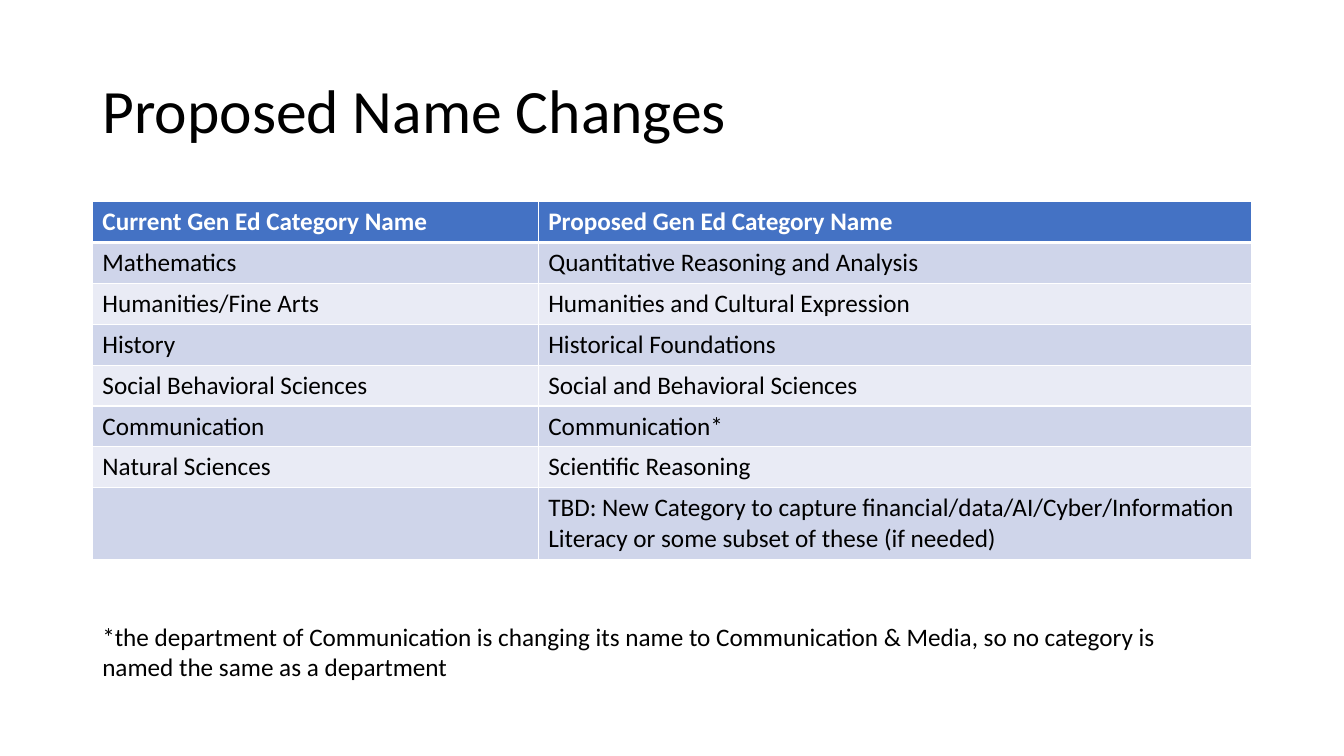
from lxml import etree
from pptx import Presentation
from pptx import util as u
from pptx.dml.color import RGBColor
from pptx.enum import text
from pptx.oxml import ns

BLACK = RGBColor(0x00, 0x00, 0x00)
WHITE = RGBColor(0xFF, 0xFF, 0xFF)
HEADER_BLUE = RGBColor(0x44, 0x72, 0xC4)
BAND_DARK = RGBColor(0xCF, 0xD5, 0xEA)
BAND_LIGHT = RGBColor(0xE9, 0xEB, 0xF5)

LEFT = 66
CONTENT_WIDTH = 828
COLUMN_WIDTHS = (318.5, 509.5)
ROW_HEIGHT = 29.2
LAST_ROW_HEIGHT = 50.4

CATEGORY_NAMES = [
    ("Current Gen Ed Category Name", "Proposed Gen Ed Category Name"),
    ("Mathematics", "Quantitative Reasoning and Analysis"),
    ("Humanities/Fine Arts", "Humanities and Cultural Expression"),
    ("History", "Historical Foundations"),
    ("Social Behavioral Sciences", "Social and Behavioral Sciences"),
    ("Communication", "Communication*"),
    ("Natural Sciences", "Scientific Reasoning"),
    ("", "TBD: New Category to capture financial/data/AI/Cyber/Information "
         "Literacy or some subset of these (if needed)"),
]
FOOTNOTE = ("*the department of Communication is changing its name to Communication & Media, "
            "so no category is named the same as a department")


def write_text(frame, content, size=18, color=BLACK, bold=False, font="Calibri",
               spacing=1.0):
    paragraph = frame.paragraphs[0]
    paragraph.alignment = text.PP_ALIGN.LEFT
    paragraph.line_spacing = spacing
    paragraph.font.size = u.Pt(size)
    if content:
        run = paragraph.add_run()
        run.text = content
        run.font.name = font
        run.font.size = u.Pt(size)
        run.font.bold = bold
        run.font.color.rgb = color


def set_borders(cell, top, bottom):
    properties = cell._tc.get_or_add_tcPr()
    for side, width in (("L", 1), ("R", 1), ("T", top), ("B", bottom)):
        line = etree.SubElement(properties, ns.qn(f"a:ln{side}"), w=str(u.Pt(width)))
        fill = etree.SubElement(line, ns.qn("a:solidFill"))
        etree.SubElement(fill, ns.qn("a:srgbClr"), val=str(WHITE))


class SlideBuilder:
    def __init__(self, presentation):
        self.slide = presentation.slides.add_slide(presentation.slide_layouts[5])
        self.slide.background.fill.solid()
        self.slide.background.fill.fore_color.rgb = WHITE

    def title(self, content, left, top, width, height):
        shape = self.slide.shapes.title
        shape.left, shape.top = u.Pt(left), u.Pt(top)
        shape.width, shape.height = u.Pt(width), u.Pt(height)
        frame = shape.text_frame
        frame.auto_size = text.MSO_AUTO_SIZE.NONE
        frame.vertical_anchor = text.MSO_ANCHOR.MIDDLE
        write_text(frame, content, size=44, spacing=0.9)

    def table(self, rows, left, top, column_widths, row_heights):
        table = self.slide.shapes.add_table(
            len(rows), len(column_widths), u.Pt(left), u.Pt(top),
            u.Pt(sum(column_widths)), u.Pt(sum(row_heights))).table
        for column, width in zip(table.columns, column_widths):
            column.width = u.Pt(width)
        for index, (row, height, names) in enumerate(zip(table.rows, row_heights, rows)):
            row.height = u.Pt(height)
            header = index == 0
            band = BAND_DARK if index % 2 else BAND_LIGHT
            for cell, name in zip(row.cells, names):
                set_borders(cell, top=3 if index == 1 else 1, bottom=3 if header else 1)
                cell.fill.solid()
                cell.fill.fore_color.rgb = HEADER_BLUE if header else band
                write_text(cell.text_frame, name, color=WHITE if header else BLACK,
                           bold=header)

    def text_box(self, content, left, top, width, height):
        frame = self.slide.shapes.add_textbox(
            u.Pt(left), u.Pt(top), u.Pt(width), u.Pt(height)).text_frame
        frame.word_wrap = True
        frame.auto_size = text.MSO_AUTO_SIZE.SHAPE_TO_FIT_TEXT
        write_text(frame, content)


def main():
    presentation = Presentation()
    presentation.slide_width, presentation.slide_height = u.Pt(960), u.Pt(540)
    builder = SlideBuilder(presentation)
    builder.title("Proposed Name Changes", LEFT, 28.75, CONTENT_WIDTH, 104.4)
    row_heights = [ROW_HEIGHT] * (len(CATEGORY_NAMES) - 1) + [LAST_ROW_HEIGHT]
    builder.table(CATEGORY_NAMES, LEFT, 144, COLUMN_WIDTHS, row_heights)
    builder.text_box(FOOTNOTE, LEFT, 440, 817, 51)
    presentation.save("out.pptx")


if __name__ == "__main__":
    main()
